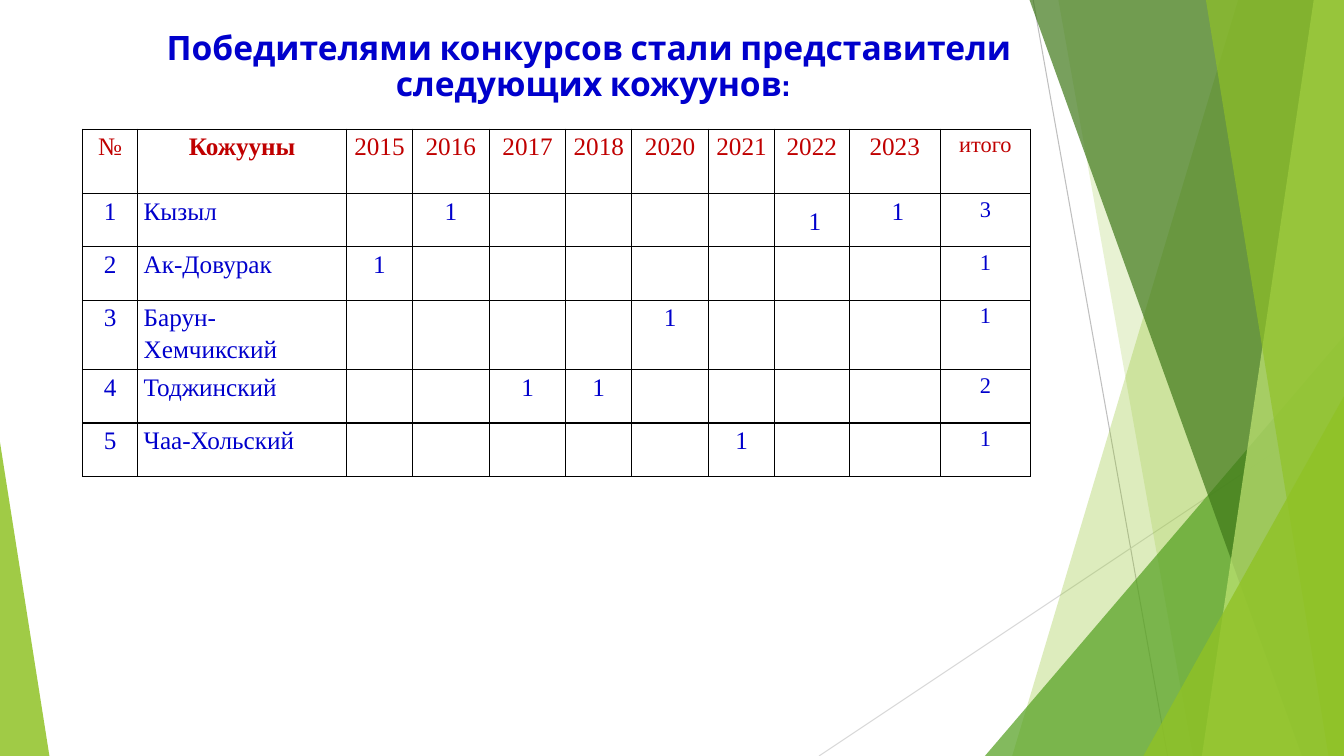
from lxml import etree
from pptx import Presentation
from pptx.dml.color import RGBColor
from pptx.enum.shapes import MSO_CONNECTOR, MSO_SHAPE
from pptx.enum.text import MSO_ANCHOR, PP_ALIGN
from pptx.oxml.ns import qn
from pptx.util import Pt

STRAIGHT = MSO_CONNECTOR.STRAIGHT
TRIANGLE = MSO_SHAPE.ISOSCELES_TRIANGLE
CENTER, LEFT = PP_ALIGN.CENTER, PP_ALIGN.LEFT
TOP, MIDDLE = MSO_ANCHOR.TOP, MSO_ANCHOR.MIDDLE

WIDTH, HEIGHT = 960, 540
BLUE, RED, GREEN = "0000CC", "C00000", "90C226"
TITLE = ["Победителями конкурсов стали представители ", "следующих кожуунов:"]
YEARS = ["2015", "2016", "2017", "2018", "2020", "2021", "2022", "2023"]
DISTRICTS = [
    ("Кызыл", {"2016": "1", "2022": " 1", "2023": " 1"}),
    ("Ак-Довурак", {"2015": "1"}),
    ("Барун-Хемчикский", {"2020": "1"}),
    ("Тоджинский", {"2017": "1", "2018": "1"}),
    ("Чаа-Хольский", {"2021": "1"}),
]
COL_WIDTHS = [39.4, 149.2, 47, 55, 54.7, 47, 55, 47, 53.4, 65, 64.6]
ROW_HEIGHTS = [46, 38.1, 38.1, 46, 38.1, 38.1]


def rgb(color):
    return RGBColor.from_string(color)


def paint(sp, color, opacity):
    sp.shadow.inherit = False
    sp.fill.solid()
    sp.fill.fore_color.rgb = rgb(color)
    sp.line.fill.background()
    clr = sp.fill._xPr.find(qn("a:solidFill"))[0]
    etree.SubElement(clr, qn("a:alpha"), val=str(opacity * 1000))


def add_line(s, x1, y1, x2, y2, color):
    ln = s.shapes.add_connector(STRAIGHT, Pt(x1), Pt(y1), Pt(x2), Pt(y2))
    ln.line.color.rgb = rgb(color)
    ln.line.width = Pt(0.75)
    etree.SubElement(ln._element.spPr, qn("a:effectLst"))


def add_band(s, right, y, h, top_w, bottom_w, color, opacity):
    fb = s.shapes.build_freeform(Pt(right - top_w), Pt(y))
    fb.add_line_segments([(Pt(right), Pt(y)), (Pt(right), Pt(y + h)),
                          (Pt(right - bottom_w), Pt(y + h))], close=True)
    paint(fb.convert_to_shape(), color, opacity)


def add_corner(s, x, bottom, w, h, apex, color, opacity):
    sp = s.shapes.add_shape(TRIANGLE, Pt(x), Pt(bottom - h), Pt(w), Pt(h))
    sp.adjustments[0] = apex
    paint(sp, color, opacity)


def add_backdrop(s, x, y, w, h):
    right, bottom = x + w, y + h
    add_line(s, right - 222, y, right - 126, bottom, "BFBFBF")
    add_line(s, right, y + 290, right - 375, bottom, "D9D9D9")
    add_band(s, right, y, h, 75.6, 237, GREEN, 30)
    add_band(s, right, y, h, 204, 108, GREEN, 20)
    add_corner(s, right - 256.5, bottom, 256.5, 300, 1, "54A021", 72)
    add_band(s, right, y, h, 224.6, 30, "3F7819", 70)
    add_band(s, right, y, h, 21.6, 101.5, "C0E474", 70)
    add_band(s, right, y, h, 98.6, 11, GREEN, 65)
    add_corner(s, right - 143.3, bottom, 143.3, 257, 1, GREEN, 80)
    add_corner(s, x, bottom, 35.3, 224, 0, GREEN, 85)


def add_run(p, text, font, size, color, bold=False):
    r = p.add_run()
    r.text = text
    r.font.name = font
    r.font.size = Pt(size)
    r.font.bold = bold
    r.font.color.rgb = rgb(color)


def add_title(s, x, y, w, h):
    tf = s.shapes.add_textbox(Pt(x), Pt(y), Pt(w), Pt(h)).text_frame
    tf.word_wrap = True
    tf.vertical_anchor = TOP
    p = tf.paragraphs[0]
    p.alignment = CENTER
    p.line_spacing = 0.9
    for i, text in enumerate(TITLE):
        if i:
            p.add_line_break()
        add_run(p, text, "Cabin", 24, BLUE, True)


def add_borders(cell):
    tcPr = cell._tc.get_or_add_tcPr()
    for i, side in enumerate(["lnL", "lnR", "lnT", "lnB"]):
        ln = etree.Element(qn("a:" + side), w=str(Pt(1)))
        fill = etree.SubElement(ln, qn("a:solidFill"))
        etree.SubElement(fill, qn("a:srgbClr"), val="000000")
        tcPr.insert(i, ln)


def fill_cell(cell, text, size, color, bold, align):
    cell.margin_left = cell.margin_right = Pt(4.3)
    cell.margin_top = cell.margin_bottom = 0
    cell.fill.background()
    add_borders(cell)
    p = cell.text_frame.paragraphs[0]
    p.alignment = align
    p.line_spacing = 1.15
    if text:
        add_run(p, text, "Times New Roman", size, color, bold)


def add_winners_table(s, x, y, w, h):
    rows = [["№", "Кожууны", *YEARS, "итого"]]
    for n, (name, wins) in enumerate(DISTRICTS, 1):
        rows.append([str(n), name, *(wins.get(year, "") for year in YEARS),
                     str(len(wins))])
    table = s.shapes.add_table(len(rows), len(rows[0]),
                               Pt(x), Pt(y), Pt(w), Pt(h)).table
    table.first_row = table.horz_banding = False
    for col, width in zip(table.columns, COL_WIDTHS):
        col.width = Pt(width * w / sum(COL_WIDTHS))
    for row, height in zip(table.rows, ROW_HEIGHTS):
        row.height = Pt(height * h / sum(ROW_HEIGHTS))
    last = len(rows[0]) - 1
    for i, row in enumerate(rows):
        for j, text in enumerate(row):
            fill_cell(table.cell(i, j), text,
                      size=16 if j == last else 18,
                      color=BLUE if i else RED,
                      bold=i == 0 and j == 1,
                      align=LEFT if i and j == 1 else CENTER)
    table.cell(1, 2 + YEARS.index("2022")).vertical_anchor = MIDDLE


def main():
    prs = Presentation()
    prs.slide_width, prs.slide_height = Pt(WIDTH), Pt(HEIGHT)
    s = prs.slides.add_slide(prs.slide_layouts[6])
    add_backdrop(s, 0, 0, WIDTH, HEIGHT)
    add_title(s, 20, 18.7, 807, 505.5)
    add_winners_table(s, 59, 92.2, sum(COL_WIDTHS), sum(ROW_HEIGHTS))
    prs.save("out.pptx")


if __name__ == "__main__":
    main()
